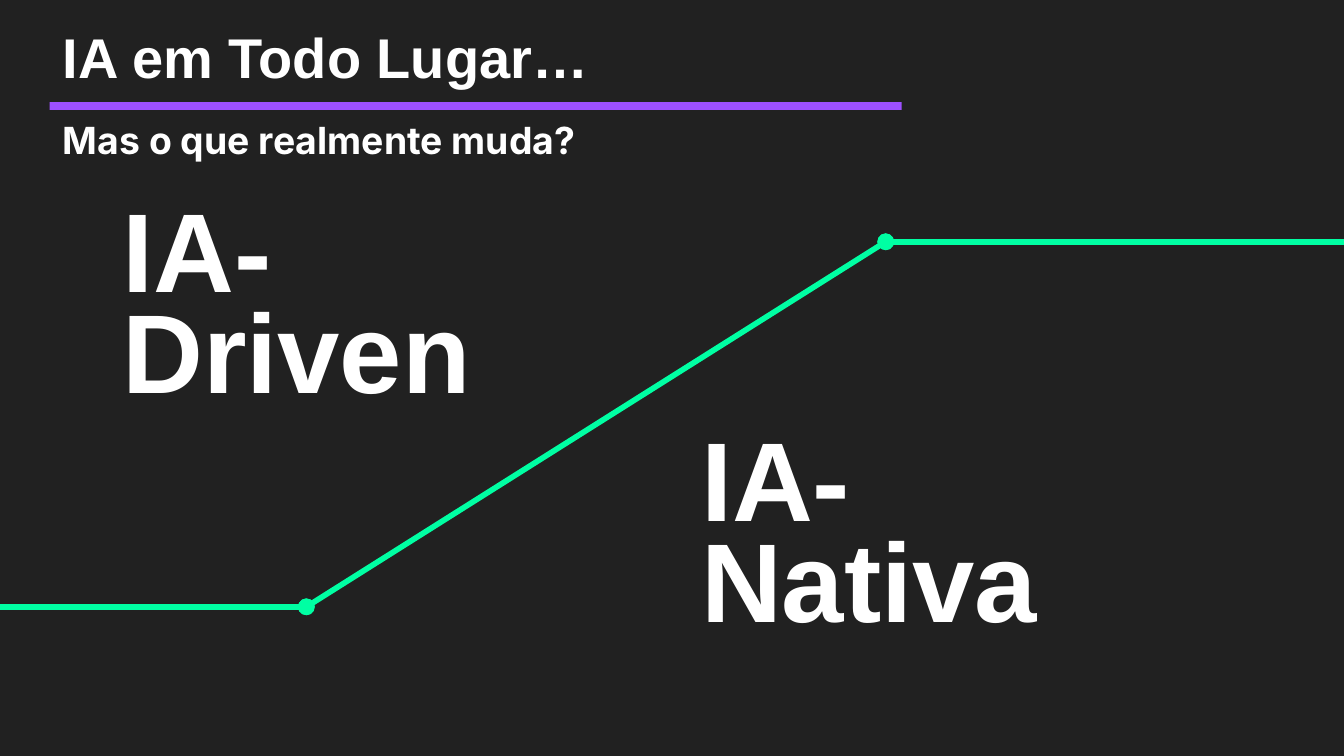
import dataclasses
import itertools

import lxml.etree
import pptx
import pptx.dml.color
import pptx.enum.shapes
import pptx.enum.text
import pptx.oxml.ns
import pptx.util

Cm = pptx.util.Cm
Pt = pptx.util.Pt
RGB = pptx.dml.color.RGBColor


@dataclasses.dataclass(frozen=True)
class Theme:
    back: RGB = RGB(0x21, 0x21, 0x21)
    text: RGB = RGB(0xFF, 0xFF, 0xFF)
    bar: RGB = RGB(0x9D, 0x50, 0xFF)
    step: RGB = RGB(0x00, 0xFF, 0xA3)
    font: str = "Arial"
    sub_font: str = "Inter"
    title: int = 30
    sub: int = 20
    big: int = 60
    line: int = 3


class Deck:
    def __init__(self, theme):
        self.theme = theme
        self.prs = pptx.Presentation()
        self.prs.slide_width = Cm(25.4)
        self.prs.slide_height = Cm(14.29)
        self.slide = self.prs.slides.add_slide(self.prs.slide_layouts[5])
        fill = self.slide.background.fill
        fill.solid()
        fill.fore_color.rgb = theme.back

    def style(self, shape, words, size, font, spacing):
        frame = shape.text_frame
        frame.text = words
        frame.word_wrap = True
        frame.auto_size = pptx.enum.text.MSO_AUTO_SIZE.SHAPE_TO_FIT_TEXT
        frame.vertical_anchor = pptx.enum.text.MSO_ANCHOR.MIDDLE
        frame.margin_left = frame.margin_right = Cm(0.25)
        frame.margin_top = frame.margin_bottom = Cm(0.25)
        para = frame.paragraphs[0]
        para.alignment = pptx.enum.text.PP_ALIGN.LEFT
        para.line_spacing = spacing
        para.space_after = Pt(6)
        para.font.name = font
        para.font.size = Pt(size)
        para.font.bold = True
        para.font.color.rgb = self.theme.text

    def title(self, words, left, top, width, height):
        shape = self.slide.shapes.title
        shape.left, shape.top = Cm(left), Cm(top)
        shape.width, shape.height = Cm(width), Cm(height)
        self.style(shape, words, self.theme.title, self.theme.font, 0.75)

    def text(self, words, left, top, width, height, size, font, spacing):
        shape = self.slide.shapes.add_textbox(
            Cm(left), Cm(top), Cm(width), Cm(height))
        self.style(shape, words, size, font, spacing)

    def bar(self, left, top, width, height):
        shape = self.slide.shapes.add_shape(
            pptx.enum.shapes.MSO_SHAPE.RECTANGLE,
            Cm(left), Cm(top), Cm(width), Cm(height))
        shape.shadow.inherit = False
        shape.fill.solid()
        shape.fill.fore_color.rgb = self.theme.bar
        shape.line.fill.background()

    def line(self, start, end):
        link = self.slide.shapes.add_connector(
            pptx.enum.shapes.MSO_CONNECTOR.STRAIGHT,
            *map(Cm, start), *map(Cm, end))
        link.line.color.rgb = self.theme.step
        link.line.width = Pt(self.theme.line)
        props = link._element.spPr
        stroke = props.find(pptx.oxml.ns.qn("a:ln"))
        for tag in ("a:headEnd", "a:tailEnd"):
            lxml.etree.SubElement(stroke, pptx.oxml.ns.qn(tag), type="oval")
        lxml.etree.SubElement(props, pptx.oxml.ns.qn("a:effectLst"))


def main():
    theme = Theme()
    deck = Deck(theme)
    left, width = 0.94, 16.1
    deck.text("Mas o que realmente muda?", left, 1.63, 12.98, 2.01,
              theme.sub, theme.sub_font, 1.0)
    deck.bar(left, 1.93, width, 0.15)
    deck.title("IA em Todo Lugar…", left, 0.46, width, 1.47)
    for words, x, y in (("IA-Driven", 2.06, 4.7), ("IA-Nativa", 13, 9.02)):
        deck.text(words, x, y, 8.71, 2.44, theme.big, theme.font, 0.75)
    low, high = 11.47, 4.57
    points = [(-0.48, low), (5.79, low), (16.74, high), (25.98, high)]
    for start, end in itertools.pairwise(points):
        deck.line(start, end)
    deck.prs.save("out.pptx")


if __name__ == "__main__":
    main()
